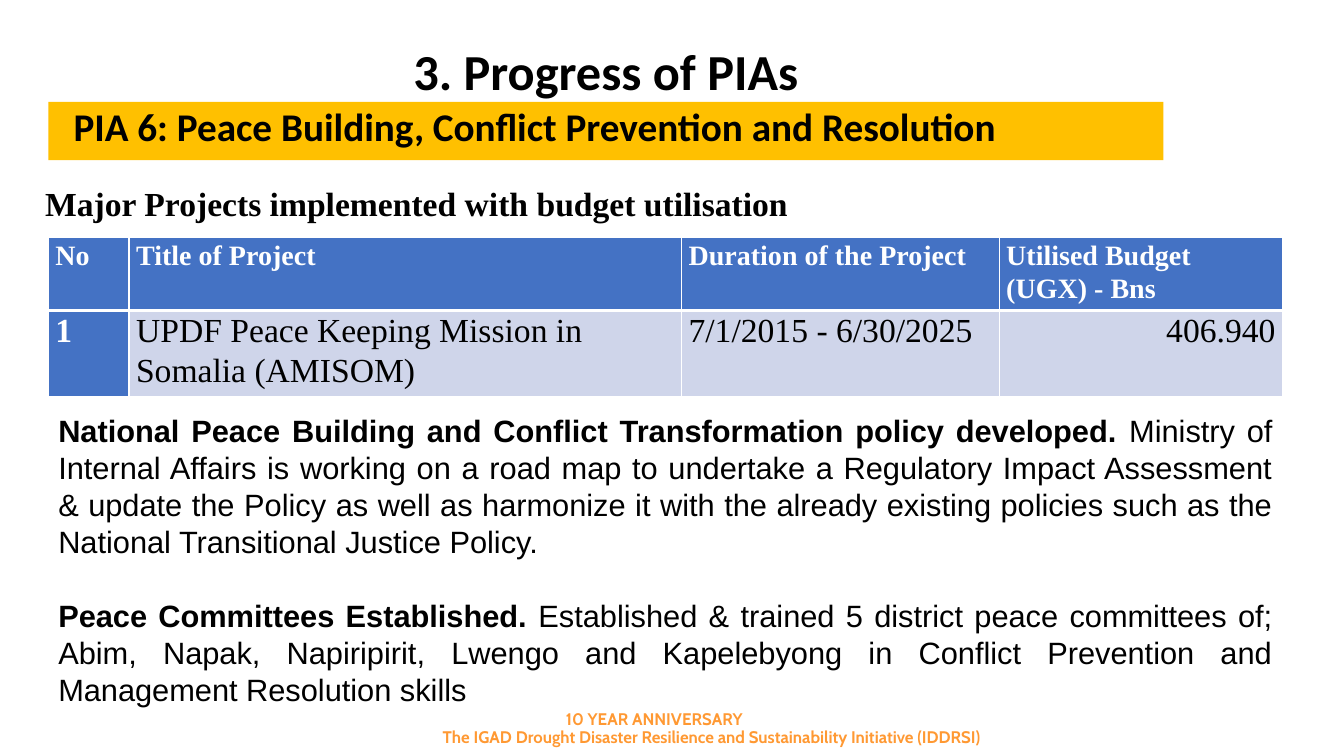
"""Build the slide on progress of PIA 6 with its project table."""
from lxml import etree
from pptx import Presentation
from pptx.dml.color import RGBColor
from pptx.enum.shapes import MSO_SHAPE
from pptx.enum.text import MSO_ANCHOR, PP_ALIGN
from pptx.oxml.ns import qn
from pptx.util import Inches, Pt

LEFT, CENTER, RIGHT, JUSTIFY = PP_ALIGN.LEFT, PP_ALIGN.CENTER, PP_ALIGN.RIGHT, PP_ALIGN.JUSTIFY
RECTANGLE = MSO_SHAPE.RECTANGLE
TOP = MSO_ANCHOR.TOP
BLACK, WHITE, ORANGE, GOLD = "000000", "FFFFFF", "FF9933", "FFC000"
BLUE, PALE_BLUE = "4472C4", "CFD5EA"
SERIF = "Times New Roman"

TITLE = "3. Progress of PIAs"
BANNER = "PIA 6: Peace Building, Conflict Prevention and Resolution"
TABLE_HEADING = "Major Projects implemented with budget utilisation"
PROJECTS = [
    ("No", "Title of Project", "Duration of the Project", "Utilised Budget (UGX) - Bns"),
    ("1", "UPDF Peace Keeping Mission in Somalia (AMISOM)", "7/1/2015 - 6/30/2025", "406.940"),
]
COLUMN_WIDTHS = (0.8, 5.48, 3.15, 2.81)
ROW_HEIGHTS = (0.72, 0.85)
ACHIEVEMENTS = [
    ("National Peace Building and Conflict Transformation policy developed. ",
     "Ministry of Internal Affairs is working on a road map to undertake a Regulatory Impact "
     "Assessment & update the Policy as well as harmonize it with the already existing policies "
     "such as the National Transitional Justice Policy."),
    ("Peace Committees Established. ",
     "Established & trained 5 district peace committees of; Abim, Napak, Napiripirit, Lwengo and "
     "Kapelebyong in Conflict Prevention and Management Resolution skills"),
]
FOOTER = [
    ((3.15, 6.98, 6.68, 0.3), "10 YEAR ANNIVERSARY"),
    ((3.72, 7.16, 6.68, 0.3),
     "The IGAD Drought Disaster Resilience and Sustainability Initiative (IDDRSI)"),
]


def color(value):
    return RGBColor.from_string(value)


def style(paragraph, name, size, font_color=BLACK, bold=True, align=LEFT):
    paragraph.alignment = align
    font = paragraph.font
    font.name, font.size, font.bold = name, Pt(size), bold
    font.color.rgb = color(font_color)


def set_margins(frame, margin):
    frame.margin_left = frame.margin_right = margin
    frame.margin_top = frame.margin_bottom = margin


def add_text_box(slide, box):
    frame = slide.shapes.add_textbox(*map(Inches, box)).text_frame
    frame.word_wrap = True
    return frame


def add_line(slide, box, text, *font, **options):
    frame = add_text_box(slide, box)
    frame.text = text
    style(frame.paragraphs[0], *font, **options)
    return frame


def add_banner(slide):
    banner = slide.shapes.add_shape(RECTANGLE, *map(Inches, (0.48, 1.01, 11.06, 0.58)))
    banner.shadow.inherit = False
    banner.fill.solid()
    banner.fill.fore_color.rgb = color(GOLD)
    banner.line.fill.background()
    frame = banner.text_frame
    frame.word_wrap = True
    set_margins(frame, 0)
    frame.vertical_anchor = TOP
    paragraph = frame.paragraphs[0]
    paragraph.text = BANNER
    properties = paragraph._p.get_or_add_pPr()
    properties.set("marL", str(Inches(0.25)))
    properties.set("indent", "0")
    style(paragraph, "Calibri", 28, align=JUSTIFY)


def set_borders(cell, bottom_width):
    properties = cell._tc.get_or_add_tcPr()
    widths = {"a:lnL": 1, "a:lnR": 1, "a:lnT": 1, "a:lnB": bottom_width}
    for position, (tag, width) in enumerate(widths.items()):
        line = etree.Element(qn(tag), w=str(Pt(width)))
        fill = etree.SubElement(line, qn("a:solidFill"))
        etree.SubElement(fill, qn("a:srgbClr"), val=WHITE)
        properties.insert(position, line)


def add_project_table(slide):
    box = (0.48, 2.36, sum(COLUMN_WIDTHS), sum(ROW_HEIGHTS))
    table = slide.shapes.add_table(len(PROJECTS), len(COLUMN_WIDTHS), *map(Inches, box)).table
    for column, width in zip(table.columns, COLUMN_WIDTHS):
        column.width = Inches(width)
    for row, height in zip(table.rows, ROW_HEIGHTS):
        row.height = Inches(height)
    for row, values in enumerate(PROJECTS):
        for column, value in enumerate(values):
            cell = table.cell(row, column)
            is_header = row == 0 or column == 0
            cell.fill.solid()
            cell.fill.fore_color.rgb = color(BLUE if is_header else PALE_BLUE)
            cell.margin_left = cell.margin_right = Inches(0.07)
            cell.margin_top = cell.margin_bottom = 0
            cell.text = value
            paragraph = cell.text_frame.paragraphs[0]
            paragraph.line_spacing = 1.07
            style(paragraph, SERIF, 24 if row else 20, WHITE if is_header else BLACK, is_header,
                  RIGHT if row and column == 3 else LEFT)
            set_borders(cell, 1 if row else 3)


def add_achievements(slide):
    frame = add_text_box(slide, (0.48, 4.04, 12.24, 3.06))
    for index, (lead, detail) in enumerate(ACHIEVEMENTS):
        paragraph = frame.add_paragraph() if index else frame.paragraphs[0]
        if index:
            paragraph.space_before = Pt(26)
        style(paragraph, "Arial", 22, bold=False, align=JUSTIFY)
        for text, bold in ((lead, True), (detail, False)):
            run = paragraph.add_run()
            run.text = text
            run.font.bold = bold


def main():
    presentation = Presentation()
    presentation.slide_width, presentation.slide_height = Inches(13.33), Inches(7.5)
    slide = presentation.slides.add_slide(presentation.slide_layouts[6])
    for box, text in FOOTER:
        add_line(slide, box, text, "Cabin", 12, ORANGE, align=CENTER)
    title = add_line(slide, (0.48, 0.4, 11.06, 0.58), TITLE, "Calibri", 36, align=CENTER)
    set_margins(title, 0)
    add_banner(slide)
    add_project_table(slide)
    heading = add_line(slide, (0.35, 1.74, 11.18, 0.51), TABLE_HEADING, SERIF, 24)
    heading.paragraphs[0].line_spacing = 1.07
    add_achievements(slide)
    presentation.save("out.pptx")


if __name__ == "__main__":
    main()
